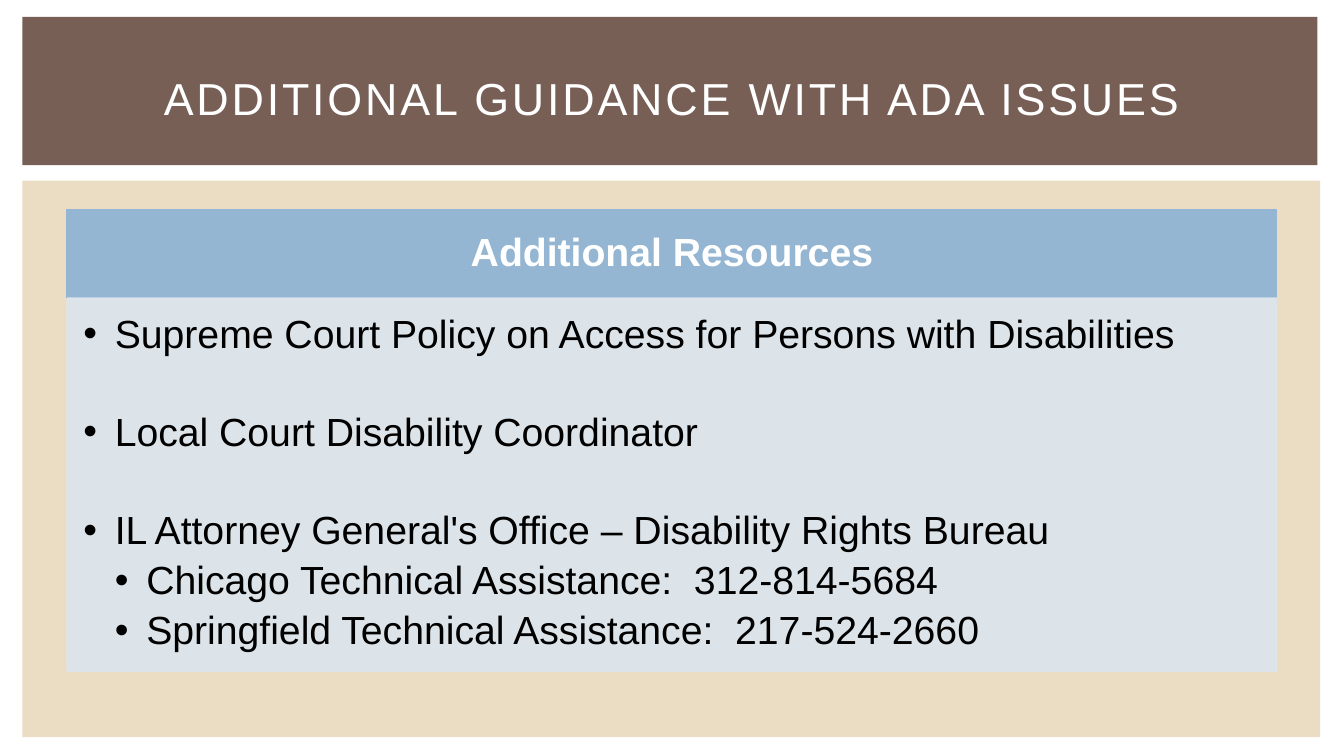
from lxml import etree
from pptx import Presentation
from pptx.dml.color import RGBColor
from pptx.enum.shapes import MSO_SHAPE
from pptx.enum.text import MSO_ANCHOR, PP_ALIGN
from pptx.oxml.ns import qn
from pptx.util import Pt

RECTANGLE = MSO_SHAPE.RECTANGLE
TOP, MIDDLE = MSO_ANCHOR.TOP, MSO_ANCHOR.MIDDLE
LEFT, CENTER = PP_ALIGN.LEFT, PP_ALIGN.CENTER

INDENT = 22.5
LINE_GAP = 5.5
TOPIC_GAP = 40

prs = Presentation()
prs.slide_width, prs.slide_height = Pt(960), Pt(540)
slide = prs.slides.add_slide(prs.slide_layouts[6])


def add_panel(left, top, width, height, color, outlined=False, opacity=100):
    panel = slide.shapes.add_shape(RECTANGLE, Pt(left), Pt(top), Pt(width), Pt(height))
    panel.shadow.inherit = False
    panel.fill.solid()
    panel.fill.fore_color.rgb = RGBColor.from_string(color)
    if outlined:
        panel.line.color.rgb = RGBColor.from_string(color)
        panel.line.width = Pt(1)
    else:
        panel.line.fill.background()
    if opacity < 100:
        for tint in panel._element.spPr.iter(qn("a:srgbClr")):
            etree.SubElement(tint, qn("a:alpha"), val=str(opacity * 1000))
    return panel


def write(shape, lines, size=28, color="000000", bold=False, align=LEFT, anchor=TOP,
          insets=(7.2, 3.6, 7.2, 3.6), line_spacing=1.0, tracking=0):
    """Fill a shape with (text, bullet level, space after) lines; level 0 has no bullet."""
    frame = shape.text_frame
    frame.word_wrap = True
    frame.vertical_anchor = anchor
    (frame.margin_left, frame.margin_top,
     frame.margin_right, frame.margin_bottom) = map(Pt, insets)
    for i, (text, level, space_after) in enumerate(lines):
        paragraph = frame.add_paragraph() if i else frame.paragraphs[0]
        paragraph.alignment = align
        paragraph.line_spacing = line_spacing
        paragraph.space_after = Pt(space_after)
        run = paragraph.add_run()
        run.text = text
        run.font.name = "Arial"
        run.font.size = Pt(size)
        run.font.bold = bold
        run.font.color.rgb = RGBColor.from_string(color)
        if tracking:
            run._r.get_or_add_rPr().set("spc", str(tracking * 100))
        if level:
            props = paragraph._p.get_or_add_pPr()
            props.set("lvl", str(level))
            props.set("marL", str(Pt(INDENT * level)))
            props.set("indent", str(Pt(-INDENT)))
            etree.SubElement(props, qn("a:buFont"), typeface="Arial")
            etree.SubElement(props, qn("a:buChar"), char="•")


add_panel(16, 129, 927, 397.5, "EBDDC3")
add_panel(16, 12, 925, 106, "775F55")

title = slide.shapes.add_textbox(Pt(40), Pt(28), Pt(880), Pt(83))
write(title, [("ADDITIONAL GUIDANCE WITH ADA ISSUES", 0, 0)], size=32, color="FFFFFF",
      align=CENTER, anchor=MIDDLE, tracking=2)

heading = add_panel(48, 150, 864, 63, "94B6D2", outlined=True)
write(heading, [("Additional Resources", 0, 0)], color="FFFFFF", bold=True,
      align=CENTER, anchor=MIDDLE, insets=(16, 8.5, 16, 8.5), line_spacing=0.9)

resources = add_panel(48, 213, 864, 266.5, "DCE5EE", outlined=True, opacity=90)
write(resources, [
    ("Supreme Court Policy on Access for Persons with Disabilities", 1, TOPIC_GAP),
    ("Local Court Disability Coordinator", 1, TOPIC_GAP),
    ("IL Attorney General's Office – Disability Rights Bureau", 1, LINE_GAP),
    ("Chicago Technical Assistance:  312-814-5684", 2, LINE_GAP),
    ("Springfield Technical Assistance:  217-524-2660", 2, LINE_GAP),
], insets=(11.5, 11.5, 16, 17), line_spacing=0.9)

prs.save("out.pptx")
